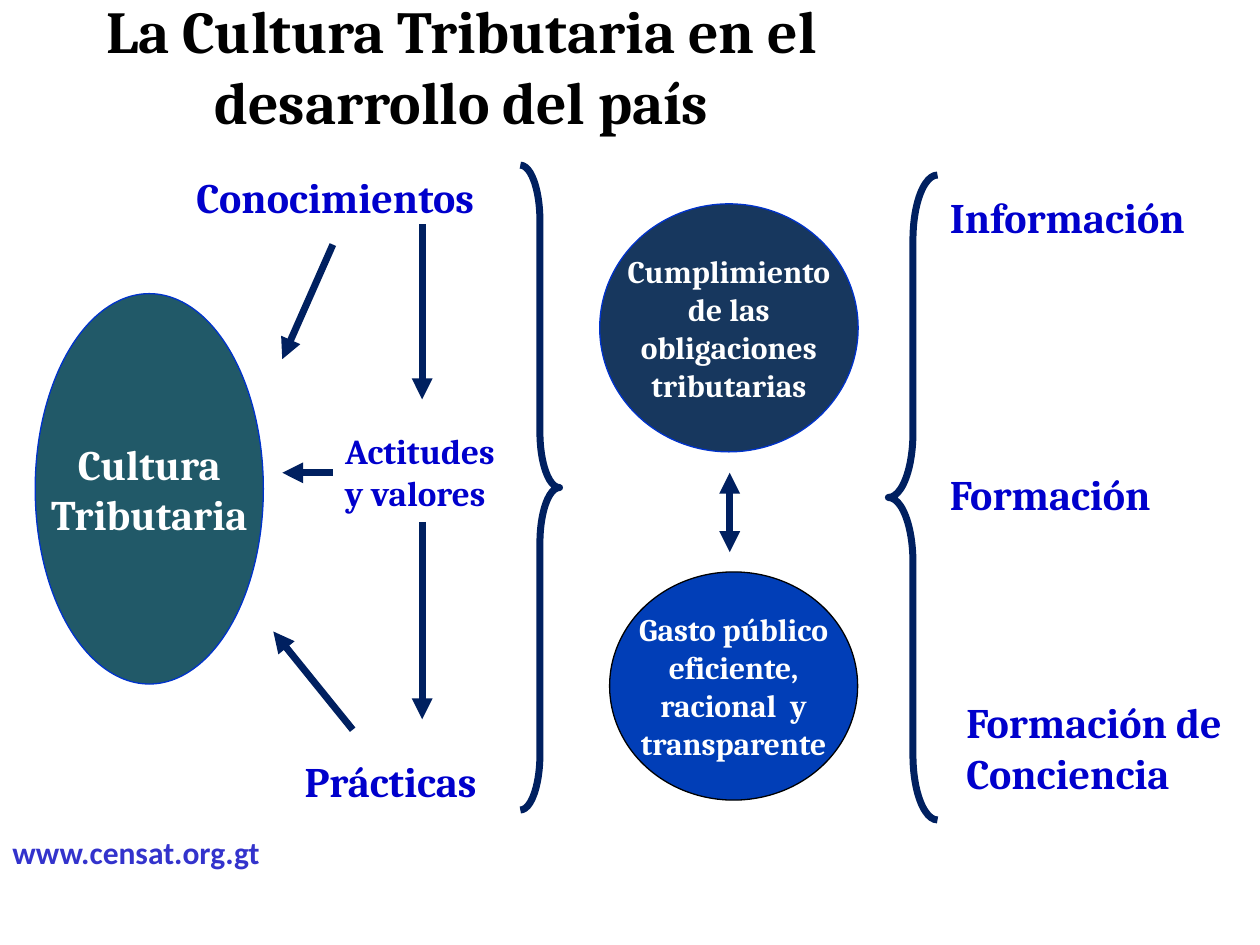
from dataclasses import dataclass

from lxml.etree import SubElement
from pptx import Presentation
from pptx.dml.color import RGBColor
from pptx.enum.shapes import MSO_CONNECTOR, MSO_SHAPE
from pptx.enum.text import MSO_ANCHOR, MSO_AUTO_SIZE, PP_ALIGN
from pptx.oxml.ns import qn
from pptx.util import Cm, Pt


@dataclass(frozen=True)
class Theme:
    font: str = "Cambria"
    link_font: str = "Calibri"
    ink: str = "000000"
    white: str = "FFFFFF"
    label: str = "0000CC"
    link: str = "3333CC"
    stroke: str = "002060"
    outline: str = "0033CC"
    teal: str = "215968"
    navy: str = "17375E"
    blue: str = "013EB7"
    title_size: int = 34
    large: int = 24
    medium: int = 20
    small: int = 18
    thick: float = 4
    thin: float = 0.75


class Deck:
    """Hold the theme and the current slide, and draw each kind of element."""

    def __init__(self, theme):
        self.theme = theme
        self.prs = Presentation()
        self.prs.slide_width, self.prs.slide_height = Cm(25.4), Cm(19.05)
        self.s = self.prs.slides.add_slide(self.prs.slide_layouts[5])

    def set_text(self, sp, lines, size, color, font=None, align=PP_ALIGN.LEFT, **frame):
        tf = sp.text_frame
        for name, value in frame.items():
            setattr(tf, name, value)
        style = {"name": font or self.theme.font, "size": Pt(size), "bold": True}
        for i, line in enumerate(lines):
            p = tf.add_paragraph() if i else tf.paragraphs[0]
            p.alignment = align
            r = p.add_run()
            r.text = line
            for name, value in style.items():
                setattr(r.font, name, value)
            r.font.color.rgb = RGBColor.from_string(color)

    def stroke(self, sp, color, width):
        sp.line.color.rgb = RGBColor.from_string(color)
        sp.line.width = Pt(width)

    def title(self, text, box):
        sp = self.s.shapes.title
        for name, value in zip(("left", "top", "width", "height"), box):
            setattr(sp, name, Cm(value))
        self.set_text(sp, [text], self.theme.title_size, self.theme.ink,
                      align=PP_ALIGN.CENTER, word_wrap=True,
                      auto_size=MSO_AUTO_SIZE.NONE, vertical_anchor=MSO_ANCHOR.MIDDLE)

    def label(self, lines, box, size, color=None, font=None):
        sp = self.s.shapes.add_textbox(*map(Cm, box))
        self.set_text(sp, lines, size, color or self.theme.label, font, word_wrap=True,
                      auto_size=MSO_AUTO_SIZE.SHAPE_TO_FIT_TEXT)

    def ellipse(self, lines, box, size, fill, outline):
        sp = self.s.shapes.add_shape(MSO_SHAPE.OVAL, *map(Cm, box))
        sp.shadow.inherit = False
        sp.fill.solid()
        sp.fill.fore_color.rgb = RGBColor.from_string(fill)
        self.stroke(sp, outline, self.theme.thin)
        self.set_text(sp, lines, size, self.theme.white, align=PP_ALIGN.CENTER,
                      word_wrap=False, vertical_anchor=MSO_ANCHOR.MIDDLE)

    def brace(self, kind, box, curve):
        sp = self.s.shapes.add_shape(kind, *map(Cm, box))
        sp.shadow.inherit = False
        sp.fill.background()
        sp.adjustments[0], sp.adjustments[1] = curve, 0.5
        self.stroke(sp, self.theme.stroke, self.theme.thick)

    def arrow(self, ends, heads=("tailEnd",)):
        cxn = self.s.shapes.add_connector(MSO_CONNECTOR.STRAIGHT, *map(Cm, ends))
        self.stroke(cxn, self.theme.stroke, self.theme.thick)
        ln = cxn.element.spPr.find(qn("a:ln"))
        for head in heads:
            SubElement(ln, qn(f"a:{head}"), type="triangle")
        SubElement(cxn.element.spPr, qn("a:effectLst"))


def main():
    t = Theme()
    deck = Deck(t)
    deck.title("La Cultura Tributaria en el desarrollo del país", (0.3, 0.33, 18.01, 1.96))

    for ellipse in (
        (["Cultura", "Tributaria"], (0.71, 5.92, 4.6, 7.87), t.large, t.teal, t.outline),
        (["Cumplimiento", "de las", "obligaciones", "tributarias"],
         (12.09, 4.11, 5.21, 5), t.small, t.navy, t.outline),
        (["Gasto público", "eficiente,", "racional  y", "transparente"],
         (12.29, 11.53, 5, 4.6), t.small, t.blue, t.ink),
    ):
        deck.ellipse(*ellipse)

    for label in (
        (["Conocimientos"], (3.71, 3.33, 6.63, 1.32), t.large),
        (["Actitudes", "y valores"], (6.71, 8.53, 3.73, 1.96), t.medium),
        (["Prácticas"], (5.89, 15.11, 4.29, 1.32), t.large),
        (["Información"], (18.9, 3.73, 5.36, 1.32), t.large),
        (["Formación"], (18.9, 9.32, 4.83, 1.32), t.large),
        (["Formación de", "Conciencia"], (19.23, 13.92, 6.17, 2.39), t.large),
        (["www.censat.org.gt"], (0, 16.66, 10.52, 1.02), t.small, t.link, t.link_font),
    ):
        deck.label(*label)

    deck.brace(MSO_SHAPE.RIGHT_BRACE, (10.49, 3.33, 0.79, 13), 1.42)
    deck.brace(MSO_SHAPE.LEFT_BRACE, (17.91, 3.53, 0.99, 13), 1.32)

    for ends in (
        (8.51, 4.52, 8.51, 8.05),
        (8.51, 10.52, 8.51, 14.5),
        (6.71, 4.93, 5.69, 7.24),
        (6.71, 9.53, 5.69, 9.53),
        (7.11, 14.71, 5.51, 12.73),
    ):
        deck.arrow(ends)
    deck.arrow((14.71, 9.53, 14.71, 11.13), ("headEnd", "tailEnd"))

    deck.prs.save("out.pptx")


if __name__ == "__main__":
    main()
